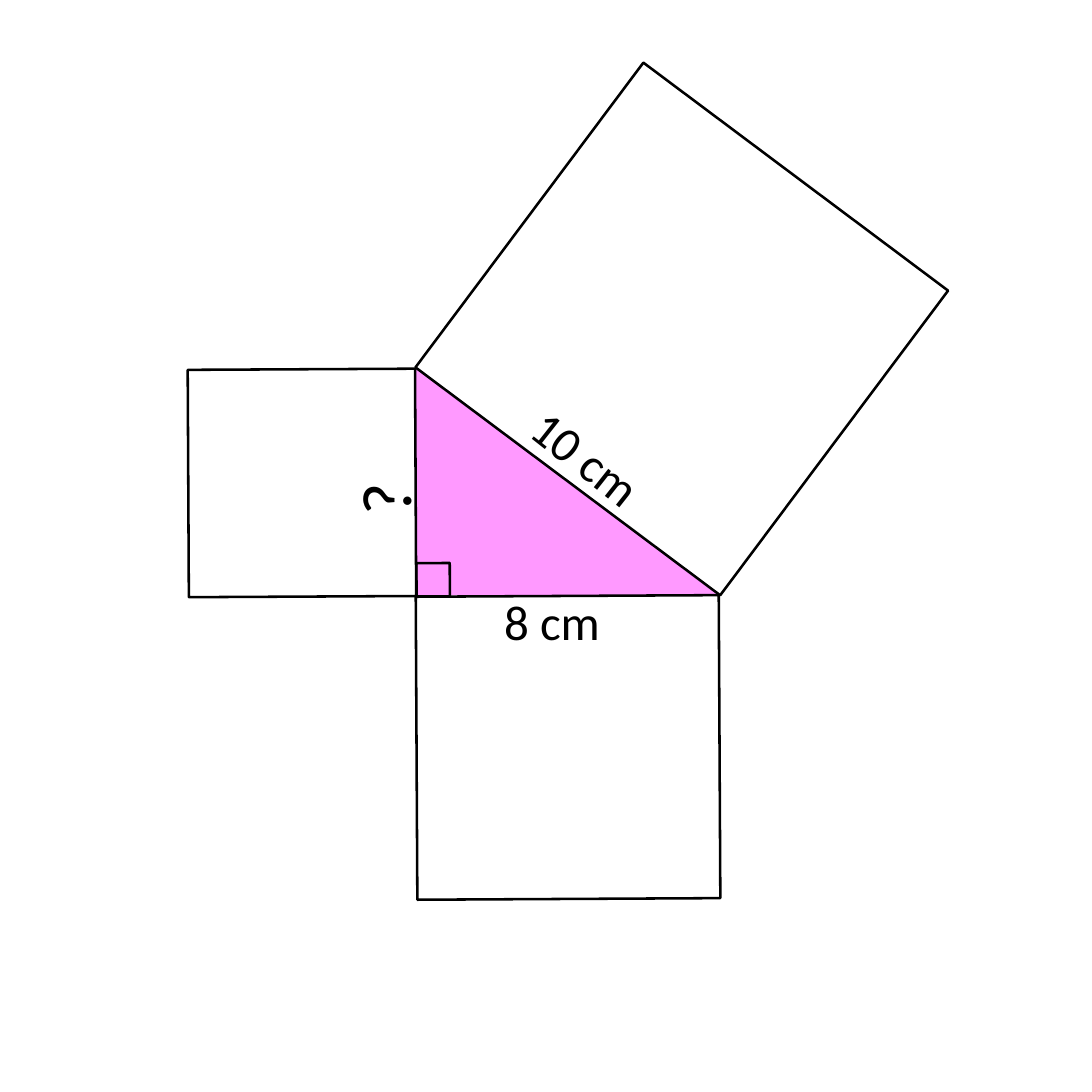
"""Draw a right-angled triangle with a square on each of its sides."""
from pptx import Presentation
from pptx import util as u
from pptx.dml import color
from pptx.enum import shapes, text

BLACK = "000000"
PINK = "FF99FF"
FONT = "Calibri"
SLIDE_SIDE = 425.5
BLANK_LAYOUT = 6

SHORT_LEG = 88.6
LONG_LEG = 118.1
HYPOTENUSE = 148.3
CORNER_MARK = 13
TILT = -0.3


def rgb(hex_string):
    """Return the colour for a hex string."""
    return color.RGBColor.from_string(hex_string)


def add_triangle(slide, left, top, width, height):
    """Add the filled triangle with its right angle at the bottom left."""
    triangle = slide.shapes.add_shape(
        shapes.MSO_SHAPE.RIGHT_TRIANGLE,
        u.Pt(left), u.Pt(top), u.Pt(width), u.Pt(height))
    triangle.shadow.inherit = False
    triangle.fill.solid()
    triangle.fill.fore_color.rgb = rgb(PINK)
    triangle.line.fill.background()


def add_square(slide, center_x, center_y, side, rotation):
    """Add an outlined square turned about its centre."""
    square = slide.shapes.add_shape(
        shapes.MSO_SHAPE.RECTANGLE,
        u.Pt(center_x - side / 2), u.Pt(center_y - side / 2),
        u.Pt(side), u.Pt(side))
    square.rotation = rotation
    square.shadow.inherit = False
    square.fill.background()
    square.line.color.rgb = rgb(BLACK)
    square.line.width = u.Pt(1)


def add_label(slide, wording, left, top, width, height, size, rotation=0):
    """Add the length label of one side."""
    label = slide.shapes.add_textbox(
        u.Pt(left), u.Pt(top), u.Pt(width), u.Pt(height))
    label.rotation = rotation
    frame = label.text_frame
    frame.word_wrap = False
    frame.auto_size = text.MSO_AUTO_SIZE.SHAPE_TO_FIT_TEXT
    run = frame.paragraphs[0].add_run()
    run.text = wording
    run.font.name = FONT
    run.font.size = u.Pt(size)
    run.font.color.rgb = rgb(BLACK)


def main():
    """Build the slide and save it."""
    presentation = Presentation()
    presentation.slide_width = u.Pt(SLIDE_SIDE)
    presentation.slide_height = u.Pt(SLIDE_SIDE)
    slide = presentation.slides.add_slide(
        presentation.slide_layouts[BLANK_LAYOUT])

    add_triangle(slide, 162, 143.3, LONG_LEG, SHORT_LEG)
    add_square(slide, 117.7, 188.2, SHORT_LEG, TILT)
    add_square(slide, 265.7, 128.2, HYPOTENUSE, 306.8)
    add_square(slide, 221.4, 291.3, LONG_LEG, TILT)
    add_square(slide, 168.8, 225.9, CORNER_MARK, TILT)

    add_label(slide, "8 cm", 189.4, 226.8, 52.6, 30.2, 19.1)
    add_label(slide, "10 cm", 198, 163.4, 61.9, 30.2, 19.1, 38.3)
    add_label(slide, "?", 136.1, 174.2, 27.4, 40.3, 27.3, 270)

    presentation.save("out.pptx")


if __name__ == "__main__":
    main()
